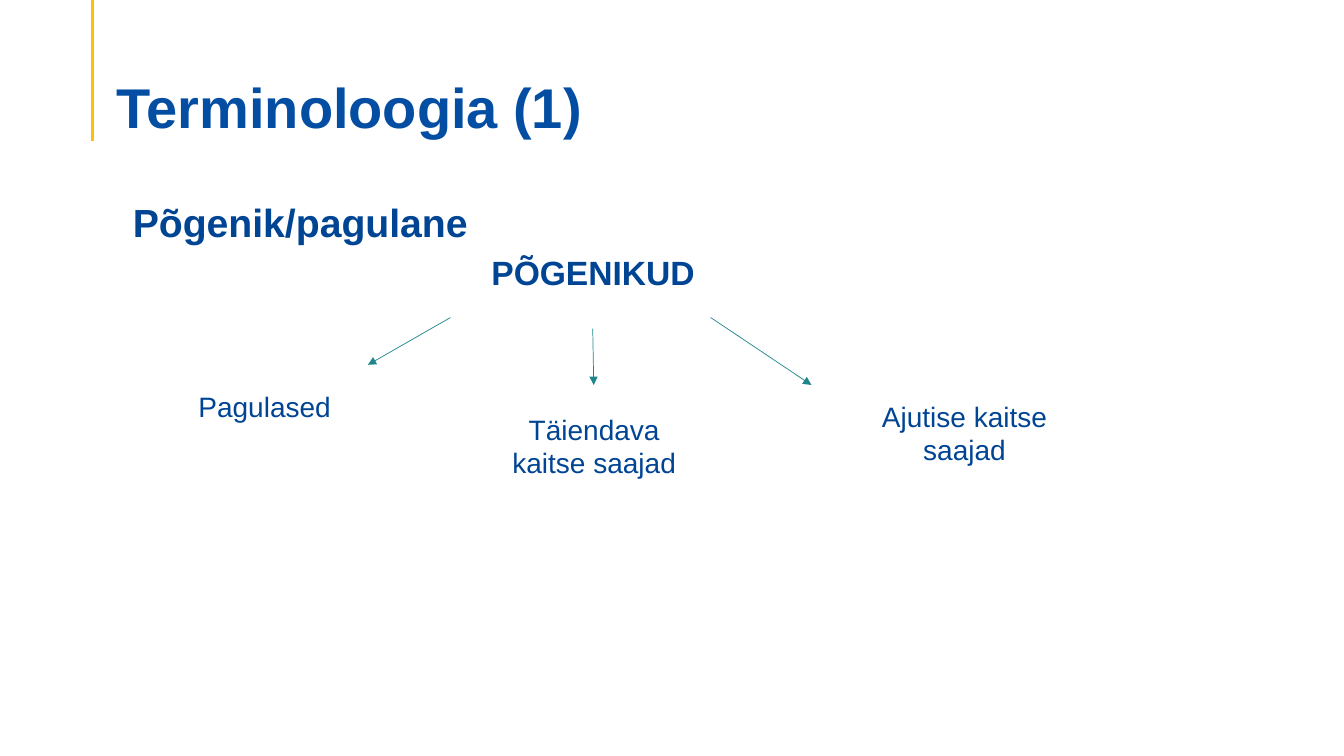
from dataclasses import dataclass

from lxml import etree
from pptx import Presentation
from pptx.dml.color import RGBColor
from pptx.enum import shapes, text
from pptx.oxml import ns
from pptx.util import Pt


@dataclass(frozen=True)
class Theme:
    """Colours, typeface and type sizes of the deck."""
    font: str = "Arial"
    title: RGBColor = RGBColor(0x03, 0x4E, 0xA2)
    body: RGBColor = RGBColor(0x00, 0x44, 0x94)
    accent: RGBColor = RGBColor(0xFF, 0xC0, 0x00)
    arrow: RGBColor = RGBColor(0x1E, 0x85, 0x8B)
    title_size: int = 40
    heading_size: int = 28
    root_size: int = 24
    branch_size: int = 20


THEME = Theme()
LEFT, CENTER = text.PP_ALIGN.LEFT, text.PP_ALIGN.CENTER


def add_label(page, area, words, size, bold=False, align=LEFT, color=THEME.body):
    """Add a wrapped one-paragraph text box and return its frame."""
    box = page.shapes.add_textbox(*(Pt(length) for length in area))
    frame = box.text_frame
    frame.word_wrap = True
    para = frame.paragraphs[0]
    para.alignment = align
    span = para.add_run()
    span.text = words
    span.font.name = THEME.font
    span.font.size = Pt(size)
    span.font.bold = bold
    span.font.color.rgb = color
    return frame


def add_line(page, start, end, color, width, arrow=False):
    """Draw a straight line, with a triangle at its end if it is an arrow."""
    line = page.shapes.add_connector(
        shapes.MSO_CONNECTOR.STRAIGHT, *(Pt(length) for length in (*start, *end)))
    line.line.color.rgb = color
    line.line.width = Pt(width)
    if arrow:
        outline = line.line._get_or_add_ln()
        etree.SubElement(outline, ns.qn("a:tailEnd"), type="triangle")
    etree.SubElement(line._element.spPr, ns.qn("a:effectLst"))


def add_title(page, left, top, width, height):
    """Place the accent rule and the slide title beside it."""
    add_line(page, (left, top), (left, top + height), THEME.accent, 2.25)
    area = (left + 10, top + 38.2, width - 10, 62)
    frame = add_label(page, area, "Terminoloogia (1)", THEME.title_size,
                      bold=True, color=THEME.title)
    frame.vertical_anchor = text.MSO_ANCHOR.BOTTOM
    frame.margin_bottom = 0
    frame.paragraphs[0].line_spacing = 0.9


def add_term_tree(page, left, top):
    """Place the root term, its three branches and the arrows between them."""
    add_label(page, (left + 176.4, top, 225.4, 36), "PÕGENIKUD",
              THEME.root_size, bold=True, align=CENTER)
    branches = (
        ("Pagulased", LEFT, (0, 98.6, 142.6, 31.7), (187.2, 50.4), (128.2, 84.2)),
        ("Täiendava kaitse saajad", CENTER, (214.6, 114.5, 150.5, 55.4),
         (288.8, 58.3), (289.5, 98.6)),
        ("Ajutise kaitse saajad", CENTER, (468, 105.1, 172.8, 55.4),
         (373, 50.4), (445, 98.6)),
    )
    for words, align, (x, y, width, height), start, end in branches:
        add_label(page, (left + x, top + y, width, height), words,
                  THEME.branch_size, align=align)
        add_line(page, (left + start[0], top + start[1]),
                 (left + end[0], top + end[1]), THEME.arrow, 0.5, arrow=True)


def main():
    """Build the terminology slide and save the deck."""
    deck = Presentation()
    deck.slide_width, deck.slide_height = Pt(960), Pt(540)
    page = deck.slides.add_slide(deck.slide_layouts[6])
    add_title(page, 66.3, 0, 838, 100.8)
    add_label(page, (87.8, 138.2, 276.5, 41), "Põgenik/pagulane",
              THEME.heading_size, bold=True)
    add_term_tree(page, 134.6, 176.4)
    deck.save("out.pptx")


if __name__ == "__main__":
    main()
